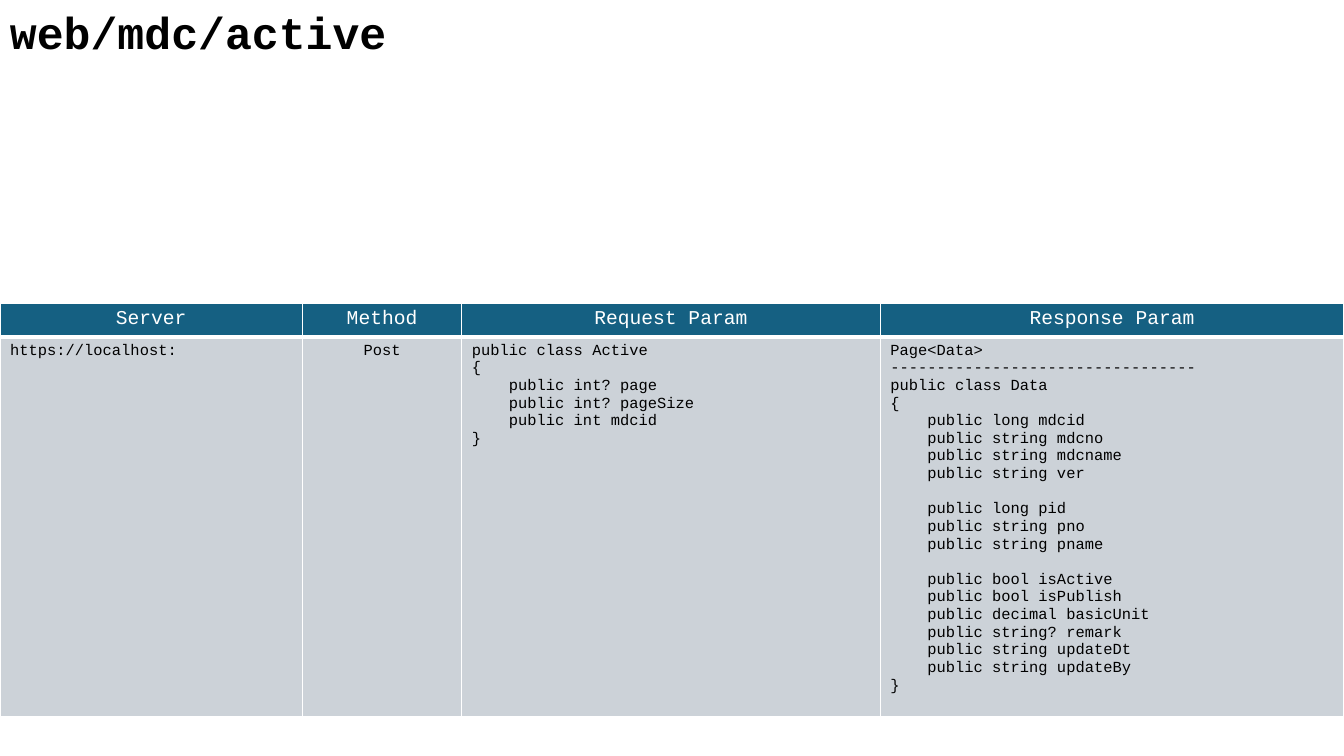
import pptx
import pptx.util
import pptx.dml.color
import pptx.enum.text
import pptx.oxml
import pptx.oxml.ns

COLORS = {"ink": "000000", "white": "FFFFFF", "header": "156082", "body": "CCD2D8"}
FONT = "Courier New"
CODE_SIZE = 11
CODE_LINE = 12.5
COLUMN_WIDTHS = [3, 1.58, 4.15, 4.6]
ROW_HEIGHTS = [0.33, 3.77]
TABLE_TOP = 3.01

HEADINGS = ["Server", "Method", "Request Param", "Response Param"]
REQUEST = """public class Active
{
    public int? page
    public int? pageSize
    public int mdcid
}"""
RESPONSE = """Page<Data>
---------------------------------
public class Data
{
    public long mdcid
    public string mdcno
    public string mdcname
    public string ver

    public long pid
    public string pno
    public string pname

    public bool isActive
    public bool isPublish
    public decimal basicUnit
    public string? remark
    public string updateDt
    public string updateBy
}"""
ROWS = [HEADINGS, ["https://localhost:", "Post", REQUEST, RESPONSE]]


def write_lines(text_frame, text, size, color, bold=False, centered=False):
    paragraph = text_frame.paragraphs[0]
    gap = False
    for index, line in enumerate(text.split("\n")):
        if not line:
            gap = True
            continue
        if index:
            paragraph = text_frame.add_paragraph()
        if gap:
            paragraph.space_before = pptx.util.Pt(CODE_LINE)
            gap = False
        if centered:
            paragraph.alignment = pptx.enum.text.PP_ALIGN.CENTER
        run = paragraph.add_run()
        run.text = line
        run.font.name = FONT
        run.font.size = pptx.util.Pt(size)
        run.font.bold = bold
        run.font.color.rgb = pptx.dml.color.RGBColor.from_string(COLORS[color])


def add_borders(cell, bottom_width):
    properties = cell._tc.get_or_add_tcPr()
    for side, width in {"L": 1, "R": 1, "T": 1, "B": bottom_width}.items():
        properties.append(pptx.oxml.parse_xml(
            f'<a:ln{side} {pptx.oxml.ns.nsdecls("a")} w="{pptx.util.Pt(width)}">'
            f'<a:solidFill><a:srgbClr val="{COLORS["white"]}"/></a:solidFill></a:ln{side}>'))


presentation = pptx.Presentation()
presentation.slide_width = pptx.util.Inches(13.33)
presentation.slide_height = pptx.util.Inches(7.5)
slide = presentation.slides.add_slide(presentation.slide_layouts[6])

title = slide.shapes.add_textbox(0, 0, pptx.util.Inches(9.45), pptx.util.Inches(0.64))
title.text_frame.word_wrap = True
title.text_frame.auto_size = pptx.enum.text.MSO_AUTO_SIZE.SHAPE_TO_FIT_TEXT
write_lines(title.text_frame, "web/mdc/active", 32, "ink", bold=True)

table = slide.shapes.add_table(
    len(ROWS), len(HEADINGS), 0, pptx.util.Inches(TABLE_TOP),
    presentation.slide_width, pptx.util.Inches(sum(ROW_HEIGHTS))).table
for column, width in zip(table.columns, COLUMN_WIDTHS):
    column.width = pptx.util.Inches(width)
for row, height in zip(table.rows, ROW_HEIGHTS):
    row.height = pptx.util.Inches(height)

for row_index, texts in enumerate(ROWS):
    is_header = row_index == 0
    for column_index, text in enumerate(texts):
        cell = table.cell(row_index, column_index)
        add_borders(cell, 3 if is_header else 1)
        cell.fill.solid()
        cell.fill.fore_color.rgb = pptx.dml.color.RGBColor.from_string(
            COLORS["header" if is_header else "body"])
        write_lines(cell.text_frame, text, 14 if is_header else CODE_SIZE,
                    "white" if is_header else "ink",
                    centered=is_header or HEADINGS[column_index] == "Method")

presentation.save("out.pptx")
